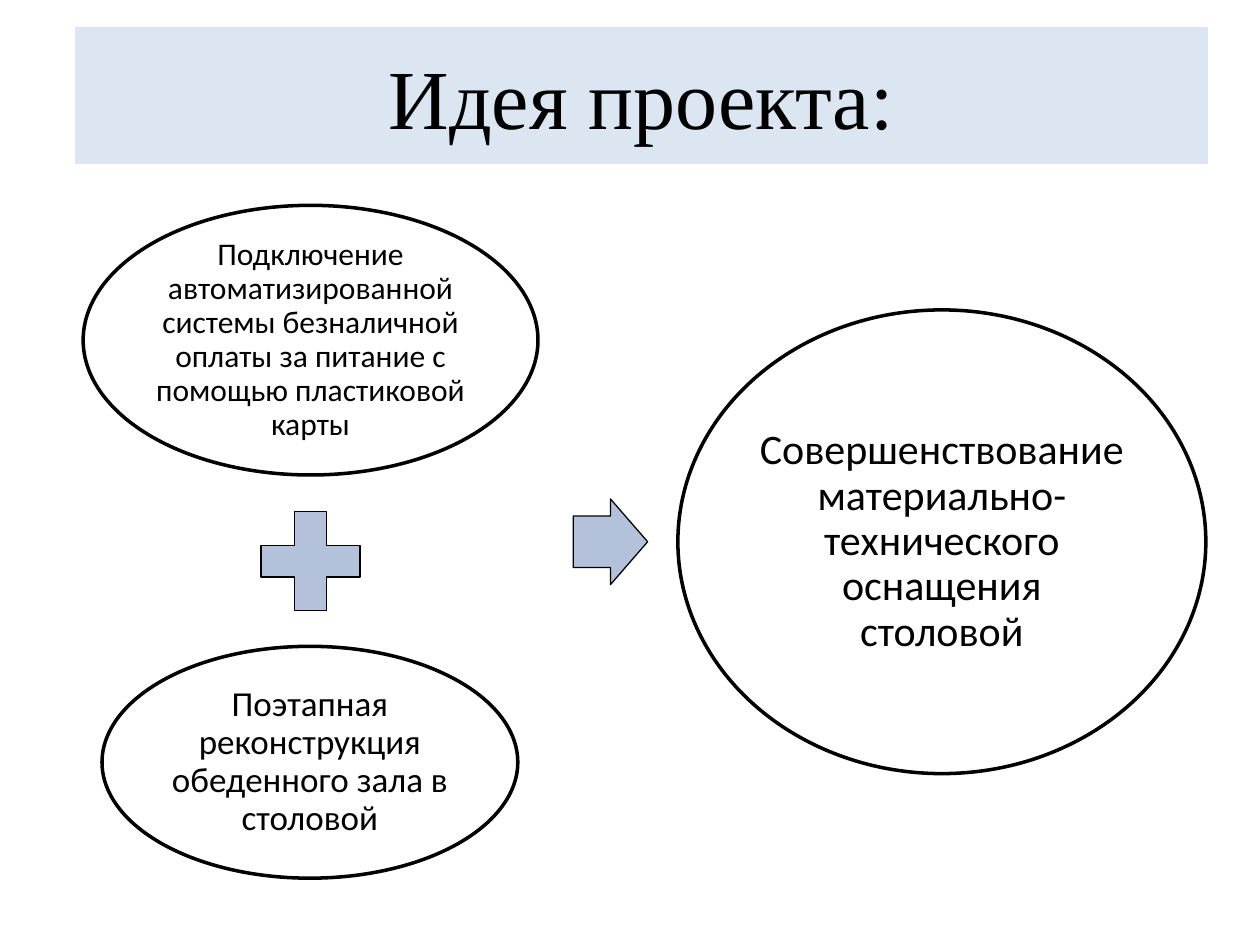
"""Build the project idea slide: two steps that add up to one result."""
from pptx import Presentation
from pptx.dml.color import RGBColor
from pptx.enum import shapes, text
from pptx.util import Inches, Pt

BLACK = RGBColor(0, 0, 0)
WHITE = RGBColor(255, 255, 255)
PALE = RGBColor(0xDC, 0xE6, 0xF2)
BLUE = RGBColor(0xB3, 0xC1, 0xDB)
KIND = shapes.MSO_SHAPE

IDEAS = [
    ((0.66, 1.63, 3.61, 2.14), 18, WHITE,
     "Подключение автоматизированной системы безналичной оплаты за питание "
     "с помощью пластиковой карты"),
    ((0.81, 5.13, 3.3, 1.84), 20, WHITE,
     "Поэтапная реконструкция обеденного зала в столовой"),
    ((5.38, 2.46, 4.19, 3.68), 24, None,
     "Совершенствование материально- технического оснащения столовой"),
]


def paint(shape, fill, line, width):
    """Set the fill and outline of a shape."""
    if fill is None:
        shape.fill.background()
    else:
        shape.fill.solid()
        shape.fill.fore_color.rgb = fill
    shape.line.color.rgb = line
    shape.line.width = Pt(width)


def write(shape, words, size, face):
    """Put centred text into a shape."""
    frame = shape.text_frame
    frame.word_wrap = True
    frame.vertical_anchor = text.MSO_ANCHOR.MIDDLE
    frame.text = words
    para = frame.paragraphs[0]
    para.alignment = text.PP_ALIGN.CENTER
    font = para.runs[0].font
    font.size, font.name = Pt(size), face
    font.color.rgb = BLACK


def add_title(slide, words):
    """Fill the title band."""
    title = slide.shapes.title
    title.left, title.top = Inches(0.59), Inches(0.21)
    title.width, title.height = Inches(9), Inches(1.1)
    paint(title, PALE, WHITE, 0.75)
    write(title, words, 48, "Times New Roman")


def add_form(slide, kind, box, fill, width):
    """Add a preset shape with a black outline."""
    shape = slide.shapes.add_shape(kind, *map(Inches, box))
    shape.shadow.inherit = False
    paint(shape, fill, BLACK, width)
    return shape


def add_idea(slide, box, size, fill, words):
    """Add an ellipse that holds one idea."""
    oval = add_form(slide, KIND.OVAL, box, fill, 2)
    write(oval, words, size, "Calibri")
    frame = oval.text_frame
    frame.margin_left = frame.margin_right = Inches(0.03)
    frame.margin_top = frame.margin_bottom = Inches(0.03)
    frame.paragraphs[0].line_spacing = 0.9


def main():
    """Build and save the slide."""
    deck = Presentation()
    deck.slide_width, deck.slide_height = Inches(10), Inches(7.5)
    slide = deck.slides.add_slide(deck.slide_layouts[5])
    add_title(slide, "Идея проекта:")
    for idea in IDEAS:
        add_idea(slide, *idea)
    add_form(slide, KIND.MATH_PLUS, (1.93, 3.92, 1.07, 1.07), BLUE, 0.75)
    arrow = add_form(slide, KIND.RIGHT_ARROW, (4.55, 3.96, 0.59, 0.68), BLUE, 0.75)
    arrow.adjustments[0] = 0.6
    deck.save("out.pptx")


if __name__ == "__main__":
    main()
